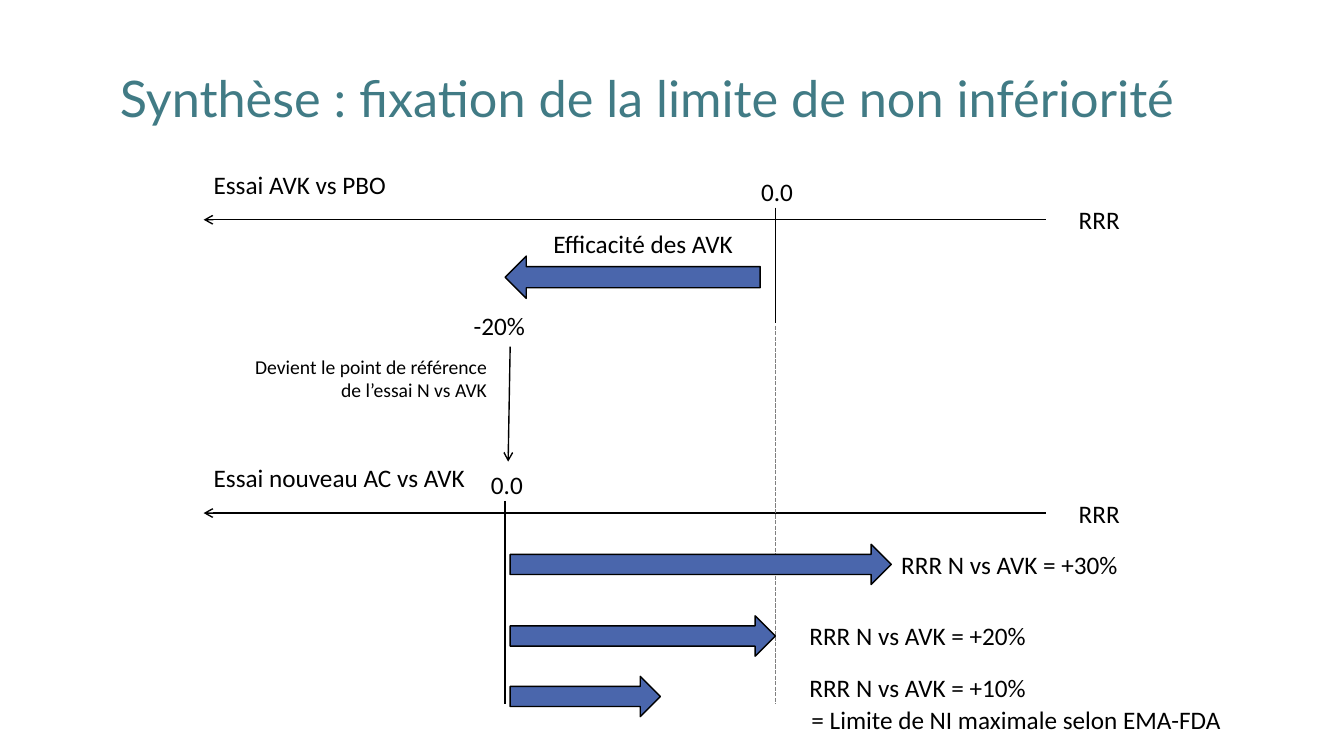
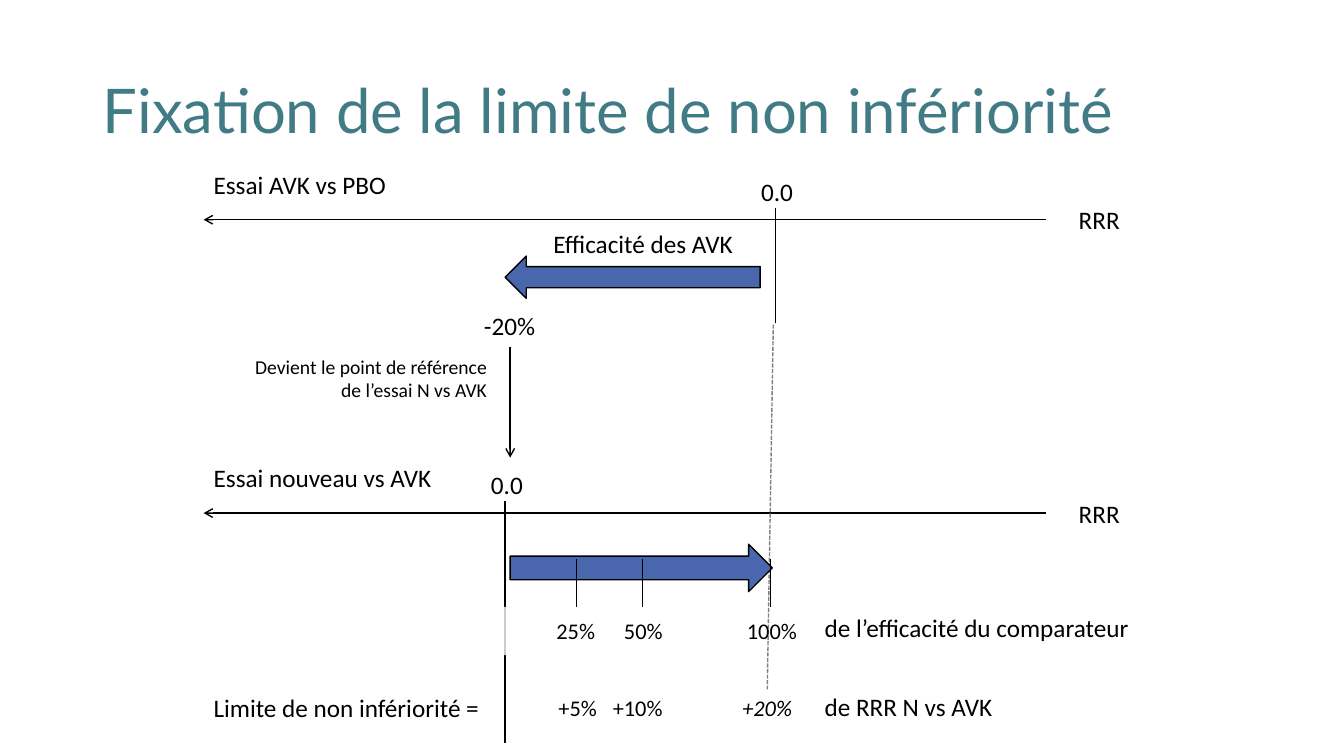
from lxml.etree import SubElement
from pptx import Presentation
from pptx.dml.color import RGBColor
from pptx.enum.dml import MSO_LINE
from pptx.enum.shapes import MSO_CONNECTOR, MSO_SHAPE
from pptx.enum.text import MSO_ANCHOR, MSO_AUTO_SIZE, PP_ALIGN
from pptx.oxml.ns import qn
from pptx.util import Inches, Pt

BLACK, GREY, WHITE = "000000", "808080", "FFFFFF"
TITLE_COLOR, ARROW_COLOR = "417B85", "4A66AC"
TITLE_FONT, BODY_FONT = "Lato", "Calibri"
AXIS_LEFT, AXIS_RIGHT = 2.02, 10.37
UPPER_AXIS, LOWER_AXIS = 2.18, 5.09
PLACEBO_X, COMPARATOR_X, ARROW_START = 7.69, 5.01, 5.06


def rgb(value):
    """Turn a hex string into a colour."""
    return RGBColor.from_string(value)


def add_text(slide, text, left, top, width, height=0.4, size=18, color=BLACK,
             font=BODY_FONT, align=PP_ALIGN.LEFT, wrap=False, italic=False):
    """Add a one-paragraph text box and return its shape."""
    shape = slide.shapes.add_textbox(Inches(left), Inches(top), Inches(width), Inches(height))
    frame = shape.text_frame
    frame.word_wrap = wrap
    frame.auto_size = MSO_AUTO_SIZE.SHAPE_TO_FIT_TEXT
    paragraph = frame.paragraphs[0]
    paragraph.text = text
    paragraph.alignment = align
    paragraph.font.name = font
    paragraph.font.size = Pt(size)
    paragraph.font.italic = italic
    paragraph.font.color.rgb = rgb(color)
    return shape


def add_title(slide, text, left, top, size):
    """Add the slide title, centred vertically in its box."""
    shape = add_text(slide, text, left, top, 11.5, 1.45, size, TITLE_COLOR, TITLE_FONT, wrap=True)
    frame = shape.text_frame
    frame.auto_size = MSO_AUTO_SIZE.NONE
    frame.vertical_anchor = MSO_ANCHOR.MIDDLE
    frame.paragraphs[0].line_spacing = 0.9


def add_line(slide, start, end, color=BLACK, dashed=False, arrow=False):
    """Draw a thin straight line, optionally dashed or ending in an arrowhead."""
    points = [Inches(value) for value in (*start, *end)]
    connector = slide.shapes.add_connector(MSO_CONNECTOR.STRAIGHT, *points)
    connector.line.color.rgb = rgb(color)
    connector.line.width = Pt(1)
    if dashed:
        connector.line.dash_style = MSO_LINE.SQUARE_DOT
    if arrow:
        SubElement(connector.line._get_or_add_ln(), qn("a:tailEnd"), type="arrow")
    SubElement(connector._element.spPr, qn("a:effectLst"))


def add_shape(slide, kind, left, top, width, height, fill):
    """Add a flat filled shape without shadow."""
    shape = slide.shapes.add_shape(kind, Inches(left), Inches(top), Inches(width), Inches(height))
    shape.shadow.inherit = False
    shape.fill.solid()
    shape.fill.fore_color.rgb = rgb(fill)
    return shape


def add_block_arrow(slide, left, top, width, height=0.4, kind=MSO_SHAPE.RIGHT_ARROW):
    """Add a blue block arrow with a black outline."""
    shape = add_shape(slide, kind, left, top, width, height, ARROW_COLOR)
    shape.line.color.rgb = rgb(BLACK)
    shape.line.width = Pt(1)


def add_veil(slide, left, top, width, height):
    """Add a translucent white rounded rectangle."""
    shape = add_shape(slide, MSO_SHAPE.ROUNDED_RECTANGLE, left, top, width, height, WHITE)
    shape.line.fill.background()
    color = shape._element.spPr.find(qn("a:solidFill"))[0]
    SubElement(color, qn("a:alpha"), val="80000")


def add_axis(slide, y, label, label_width, zero_x, zero_bottom):
    """Draw a trial axis with its name, unit and zero mark."""
    add_line(slide, (AXIS_RIGHT, y), (AXIS_LEFT, y), arrow=True)
    add_line(slide, (zero_x, y - 0.12), (zero_x, zero_bottom))
    add_text(slide, "RRR", 10.6, y - 0.2, 0.61)
    add_text(slide, "0.0", zero_x - 0.24, y - 0.48, 0.52)
    add_text(slide, label, AXIS_LEFT, y - 0.55, label_width)


def add_trials(slide, lower_label, lower_width, zero_bottom, effect_left, dashed, reference):
    """Draw the two trial axes and the link between them."""
    add_axis(slide, UPPER_AXIS, "Essai AVK vs PBO", 1.93, PLACEBO_X, 3.2)
    add_block_arrow(slide, COMPARATOR_X, 2.54, 2.53, 0.42, MSO_SHAPE.LEFT_ARROW)
    add_text(slide, "Efficacité des AVK", 5.39, 2.22, 2.01)
    add_text(slide, "-20%", effect_left, 3.03, 0.72)
    add_axis(slide, LOWER_AXIS, lower_label, lower_width, COMPARATOR_X, zero_bottom)
    add_line(slide, *dashed, color=GREY, dashed=True)
    add_line(slide, (ARROW_START, 3.44), reference, arrow=True)
    add_text(slide, "Devient le point de référence de l’essai N vs AVK", 2.25, 3.47,
             2.68, 0.57, 14, align=PP_ALIGN.RIGHT, wrap=True)


def build_summary(slide):
    """Build the slide comparing three results of the new trial."""
    add_title(slide, "Synthèse : fixation de la limite de non infériorité", 1.09, 0.28, 36)
    add_trials(slide, "Essai nouveau AC vs AVK", 2.72, 6.98, 4.6,
               ((PLACEBO_X, 3.23), (PLACEBO_X, 6.98)), (5.04, 4.58))
    results = [("+30%", 5.4, 3.78, 8.84, 5.4),
               ("+20%", 6.11, 2.63, 7.93, 6.11),
               ("+10%", 6.71, 1.49, 7.93, 6.62)]
    for gain, arrow_top, arrow_width, label_left, label_top in results:
        add_block_arrow(slide, ARROW_START, arrow_top, arrow_width)
        add_text(slide, f"RRR N vs AVK = {gain}", label_left, label_top, 2.37)
    add_text(slide, "= Limite de NI maximale selon EMA-FDA", 7.95, 6.94, 4.34, wrap=True)


def build_margin(slide):
    """Build the slide scaling the margin by the comparator's effect."""
    add_title(slide, "Fixation de la limite de non infériorité", 0.92, 0.4, 44)
    add_trials(slide, "Essai nouveau vs AVK", 2.39, 7.37, 4.7,
               ((7.67, 3.22), (7.61, 6.84)), (ARROW_START, 4.54))
    add_block_arrow(slide, ARROW_START, 5.4, 2.6, 0.47)
    marks = [(5.72, "25%", 5.42, 0.59, "+5%", 5.44, 0.59),
             (6.37, "50%", 6.09, 0.59, "+10%", 5.98, 0.7),
             (7.64, "100%", 7.31, 0.71, "+20%", 7.26, 0.7)]
    for x, share, share_left, share_width, gain, gain_left, gain_width in marks:
        full = share == "100%"
        add_line(slide, (x, 5.55), (x, 6.02))
        add_text(slide, share, share_left, 6.07, share_width, 0.37, 16)
        add_text(slide, gain, gain_left, 6.84, gain_width, 0.37, 16, italic=full,
                 align=PP_ALIGN.CENTER if full else PP_ALIGN.LEFT)
    add_text(slide, "de l’efficacité du comparateur", 8.08, 6.03, 3.29)
    add_text(slide, "de RRR N vs AVK", 8.08, 6.81, 1.89)
    add_text(slide, "Limite de non infériorité =", AXIS_LEFT, 6.82, 2.87)
    add_veil(slide, 4.7, 6.02, 0.69, 0.48)


def main():
    """Build and save the presentation."""
    presentation = Presentation()
    presentation.slide_width = Inches(13.33)
    presentation.slide_height = Inches(7.5)
    for build in (build_summary, build_margin):
        build(presentation.slides.add_slide(presentation.slide_layouts[6]))
    presentation.save("out.pptx")


if __name__ == "__main__":
    main()
